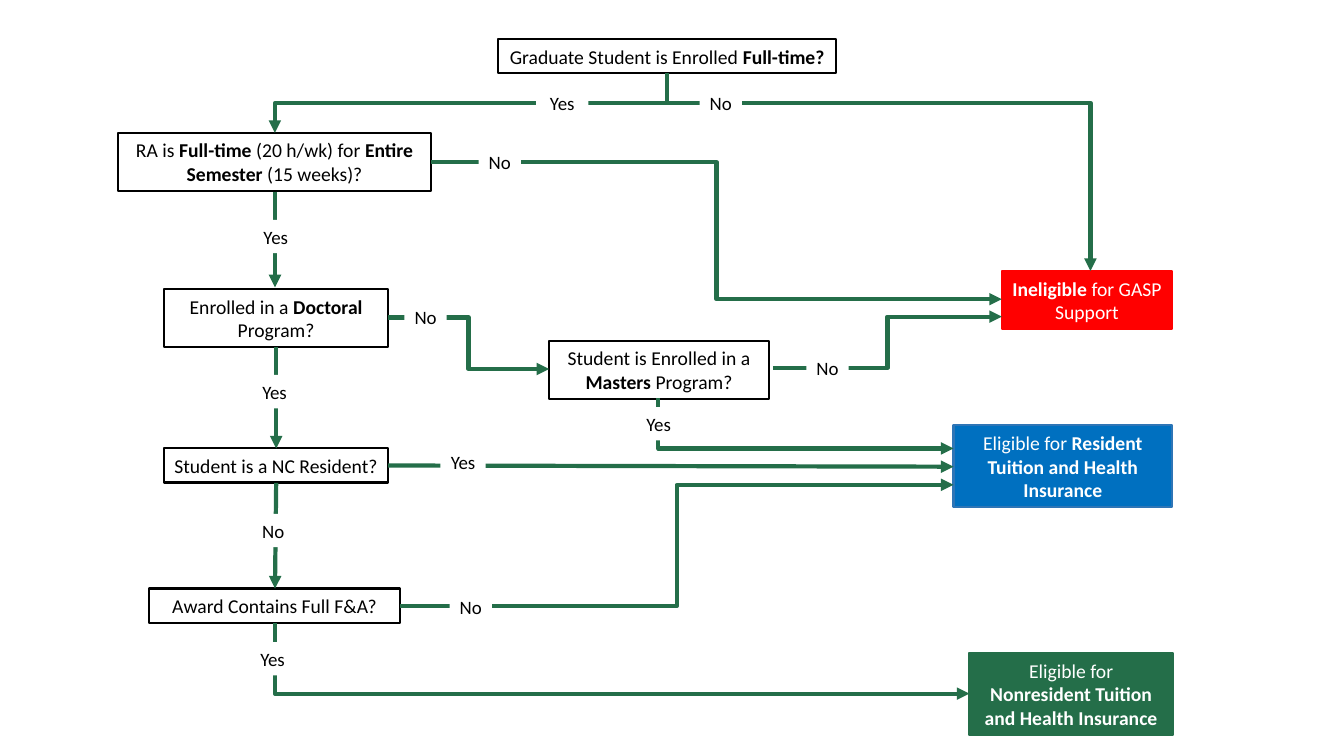
from pptx import Presentation
from pptx.dml.color import RGBColor
from pptx.enum.shapes import MSO_CONNECTOR, MSO_SHAPE
from pptx.enum.text import MSO_ANCHOR, PP_ALIGN
from pptx.oxml.ns import qn
from pptx.util import Cm, Pt
from lxml.etree import SubElement

THEME = {
    "font": "Calibri", "box": Pt(14), "label": Pt(13.5),
    "edge": Pt(1.5), "flow": Pt(3),
    "black": RGBColor(0, 0, 0), "white": RGBColor(255, 255, 255),
    "red": RGBColor(255, 0, 0), "green": RGBColor(0x24, 0x6E, 0x49),
    "blue": RGBColor(0, 0x70, 0xC0), "rim": RGBColor(0x2E, 0x75, 0xB6),
}
FRAME = {
    "margin_left": Cm(0.25), "margin_right": Cm(0.25),
    "margin_top": Cm(0.13), "margin_bottom": Cm(0.13),
    "vertical_anchor": MSO_ANCHOR.MIDDLE,
}

deck = Presentation()
deck.slide_width, deck.slide_height = Cm(33.87), Cm(19.05)
slide = deck.slides.add_slide(deck.slide_layouts[6])


def add_block(text, place, fill, edge, ink, size, wrap):
    """Add a filled rectangle; asterisks in the text switch bold on and off."""
    block = slide.shapes.add_shape(MSO_SHAPE.RECTANGLE, *map(Cm, place))
    block.shadow.inherit = False
    block.fill.solid()
    block.fill.fore_color.rgb = THEME[fill]
    if edge:
        block.line.color.rgb = THEME[edge]
        block.line.width = THEME["edge"]
    else:
        block.line.fill.background()
    frame = block.text_frame
    for key, value in {**FRAME, "word_wrap": wrap}.items():
        setattr(frame, key, value)
    para = frame.paragraphs[0]
    para.alignment = PP_ALIGN.CENTER
    for i, part in enumerate(text.split("*")):
        if part:
            run = para.add_run()
            run.text = part
            style = {"name": THEME["font"], "size": THEME[size], "bold": i % 2 == 1}
            for key, value in style.items():
                setattr(run.font, key, value)
            run.font.color.rgb = THEME[ink]


def add_flow(start, end, bends, turn):
    """Add an arrow with 0 to 2 bends; turn makes it leave vertically."""
    (x1, y1), (x2, y2) = start, end
    if turn:
        # The frame is stored a quarter turn away, about the same centre
        mx, my = (x1 + x2) / 2, (y1 + y2) / 2
        dx, dy = (x2 - x1) / 2, (y2 - y1) / 2
        x1, y1, x2, y2 = mx + dy, my - dx, mx - dy, my + dx
    kind = MSO_CONNECTOR.ELBOW if bends else MSO_CONNECTOR.STRAIGHT
    flow = slide.shapes.add_connector(kind, *map(Cm, (x1, y1, x2, y2)))
    flow.line.color.rgb = THEME["green"]
    flow.line.width = THEME["flow"]
    props = flow._element.spPr
    if bends == 1:
        props.find(qn("a:prstGeom")).set("prst", "bentConnector2")
    if turn:
        props.find(qn("a:xfrm")).set("rot", str(270 * 60000))
    SubElement(props.find(qn("a:ln")), qn("a:tailEnd")).set("type", "triangle")
    SubElement(props, qn("a:effectLst"))


# Questions and outcomes: text, left, top, width, line count, fill, edge, ink
plain = ("white", "black", "black")
boxes = [
    ("Graduate Student is Enrolled *Full-time?*", 12.55, 0.99, 8.53, 1, *plain),
    ("RA is *Full-time *(20 h/wk) for* Entire Semester* (15 weeks)?",
     2.97, 3.35, 7.9, 2, *plain),
    ("Enrolled in a *Doctoral* Program?", 4.14, 7.29, 5.64, 2, *plain),
    ("Student is Enrolled in a *Masters* Program?", 13.84, 8.59, 5.54, 2, *plain),
    ("Student is a NC Resident?", 4.14, 11.3, 5.64, 1, *plain),
    ("Award Contains Full F&A?", 3.76, 14.83, 6.32, 1, *plain),
    ("*Ineligible* for GASP Support", 25.25, 6.83, 4.29, 2, "red", "red", "white"),
    ("Eligible for *Resident Tuition and Health Insurance*",
     24.03, 10.72, 5.51, 3, "blue", "rim", "white"),
    ("Eligible for *Nonresident Tuition and Health Insurance*",
     24.43, 16.46, 5.13, 3, "green", "green", "white"),
]
for text, left, top, width, lines, fill, edge, ink in boxes:
    place = (left, top, width, 0.26 + 0.6 * lines)
    add_block(text, place, fill, edge, ink, "box", lines > 1)

# Arrows: start, end, bends, leaves vertically
flows = [
    ((16.81, 1.85), (6.93, 3.35), 2, True),
    ((16.79, 2.59), (27.48, 6.83), 1, False),
    ((6.93, 4.83), (6.93, 7.24), 0, False),
    ((10.87, 4.09), (25.25, 7.54), 2, False),
    ((6.96, 8.74), (6.96, 11.3), 0, False),
    ((9.78, 8), (13.84, 9.3), 2, False),
    ((16.59, 10.03), (24.03, 11.3), 1, True),
    ((19.48, 9.27), (25.25, 7.98), 2, False),
    ((9.78, 11.73), (24.03, 11.76), 0, False),
    ((6.96, 12.17), (6.93, 14.83), 0, False),
    ((6.93, 15.7), (24.43, 17.48), 1, True),
    ((10.08, 15.27), (24.03, 12.22), 2, False),
]
for flow in flows:
    add_flow(*flow)

# Answers on the arrows: width, then left and top of each
answers = [
    ("Yes", 1.32, [(13.51, 2.18)]),
    ("Yes", 1.14, [(6.38, 5.54), (6.35, 9.45), (16.03, 10.26),
                   (11.1, 11.23), (6.3, 16.18)]),
    ("No", 1.07, [(17.63, 2.18), (12.06, 3.66), (10.19, 7.57),
                  (20.32, 8.84), (6.35, 12.95), (11.33, 14.88)]),
]
for text, width, spots in answers:
    for left, top in spots:
        add_block(text, (left, top, width, 0.84), "white", None, "black", "label", False)

deck.save("out.pptx")
